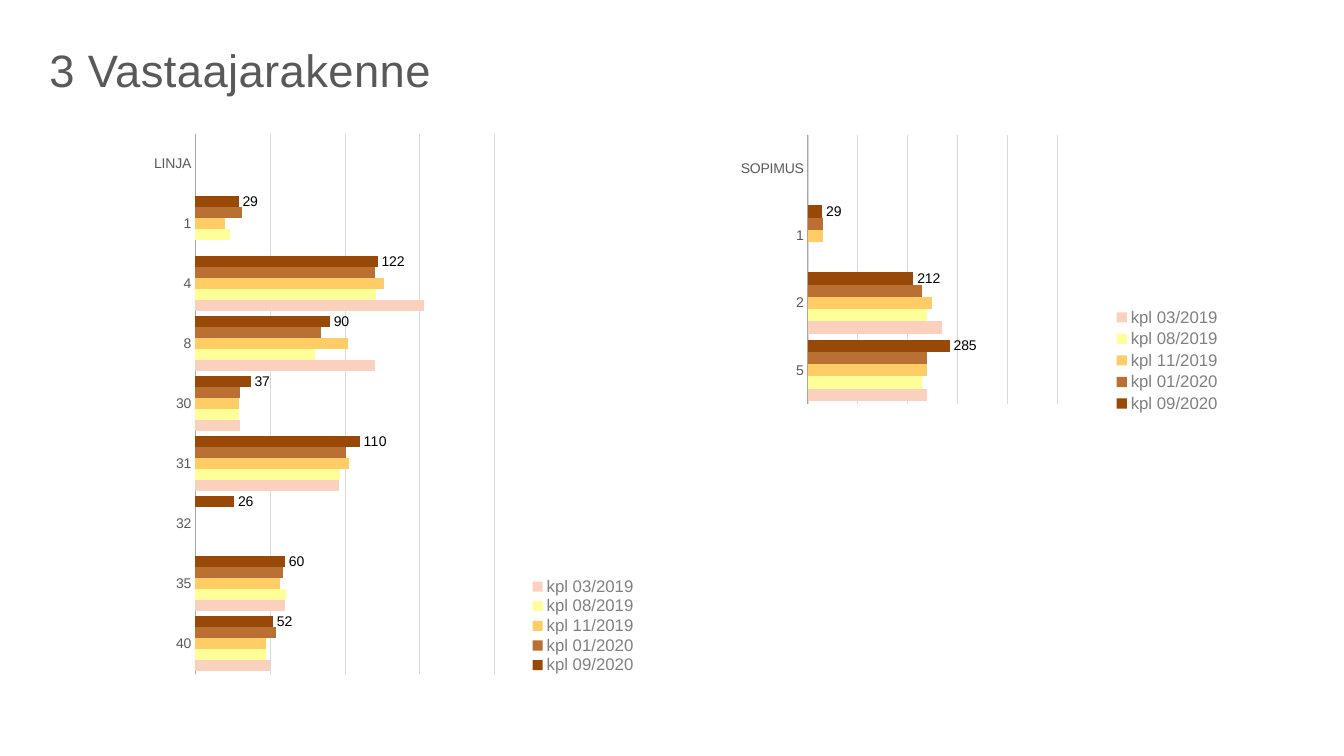
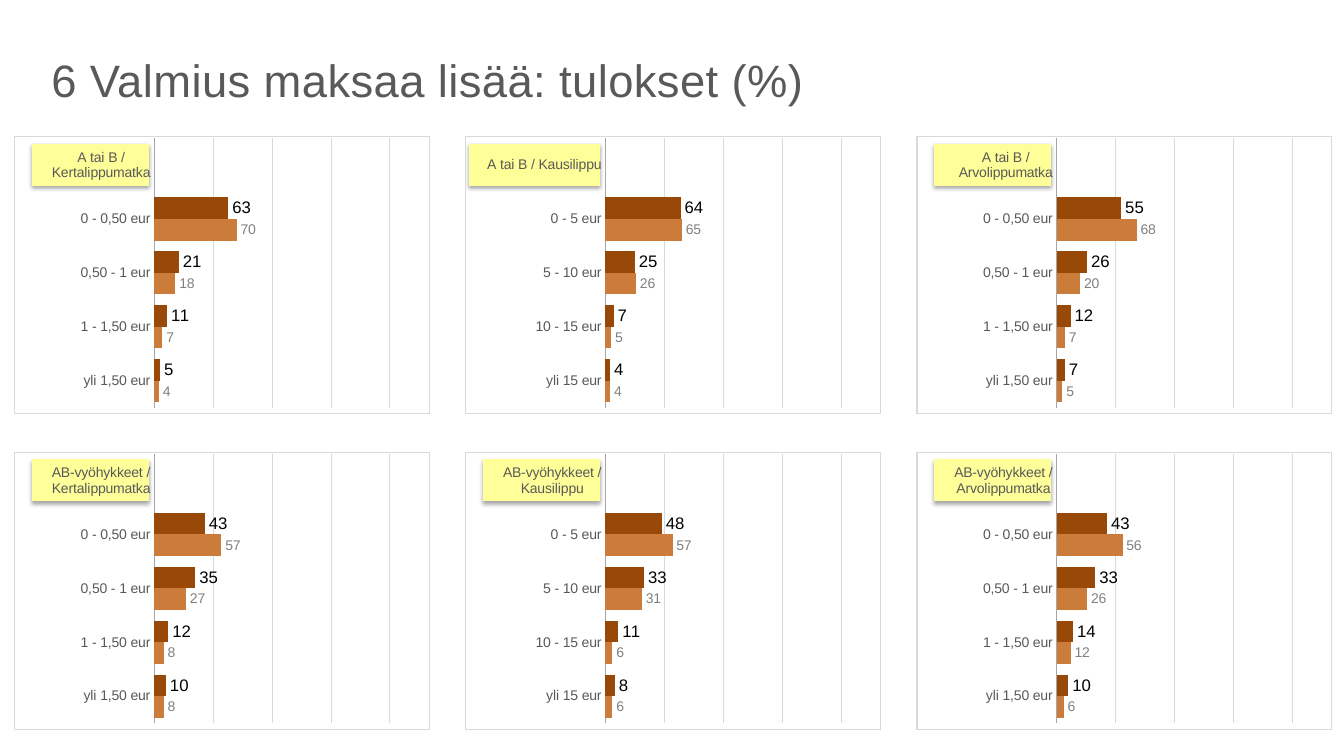
import dataclasses
import typing

import pptx
import pptx.chart.axis
import pptx.chart.chart
import pptx.chart.data
import pptx.dml.color
import pptx.enum.chart
import pptx.enum.shapes
import pptx.enum.text
import pptx.oxml
import pptx.oxml.ns
import pptx.util

SLIDE_W, SLIDE_H = 13.33, 7.5
FONT = "Arial"
BROWN, COPPER, AMBER, YELLOW, PEACH = "984807", "BA7033", "FFCC66", "FFFF99", "FBD0BD"
ORANGE = "CC7C3A"
BLACK, TEXT, MUTED, AXIS, GRID = "000000", "595959", "808080", "A6A6A6", "D9D9D9"
NS = pptx.oxml.ns.nsdecls("a", "c")
Pt = pptx.util.Pt

COLS, ROWS = 3, 2
PANEL_X, PANEL_Y, PANEL_W, PANEL_H = 1.05, 18, 30.91, 36.8
STEP_X, STEP_Y = 33.57, 41.73
TAG_RIGHT, TAG_TOP, TAG_H = 9.98, 1.07, 5.47
TAG_W, TAG_W_WIDE = 8.63, 9.68


class Box(typing.NamedTuple):
    x: float
    y: float
    w: float
    h: float

    def emu(self) -> tuple:
        sizes = (SLIDE_W, SLIDE_H) * 2
        return tuple(pptx.util.Inches(v * s / 100) for v, s in zip(self, sizes))


class Layout(typing.NamedTuple):
    x: float
    y: float
    w: float
    h: float


class Series(typing.NamedTuple):
    name: str
    values: tuple
    color: str
    label_size: int = 0
    label_color: str = BLACK


@dataclasses.dataclass
class BarChart:
    box: Box
    categories: tuple
    series: list[Series]
    plot: Layout
    maximum: int = 200
    major: int = 50
    legend: Layout | None = None
    border: bool = False


class Panel(typing.NamedTuple):
    heading: str
    bands: tuple
    now: tuple
    before: tuple
    tag_w: float = TAG_W


EURO = ("0 - 0,50 eur", "0,50 - 1 eur", "1 - 1,50 eur", "yli 1,50 eur")
SEASON = ("0 - 5 eur", "5 - 10 eur", "10 - 15 eur", "yli 15 eur")
PANELS = [
    Panel("A tai B / Kertalippumatka", EURO, (63, 21, 11, 5), (70, 18, 7, 4)),
    Panel("A tai B / Kausilippu", SEASON, (64, 25, 7, 4), (65, 26, 5, 4), TAG_W_WIDE),
    Panel("A tai B / Arvolippumatka", EURO, (55, 26, 12, 7), (68, 20, 7, 5)),
    Panel("AB-vyöhykkeet / Kertalippumatka", EURO, (43, 35, 12, 10), (57, 27, 8, 8)),
    Panel("AB-vyöhykkeet / Kausilippu", SEASON, (48, 33, 11, 8), (57, 31, 6, 6)),
    Panel("AB-vyöhykkeet / Arvolippumatka", EURO, (43, 33, 14, 10), (56, 26, 12, 6)),
]

ROUNDS = (
    ("kpl 09/2020", BROWN, 10),
    ("kpl 01/2020", COPPER, 0),
    ("kpl 11/2019", AMBER, 0),
    ("kpl 08/2019", YELLOW, 0),
    ("kpl 03/2019", PEACH, 0),
)
LINE_COUNTS = (
    (None, 29, 122, 90, 37, 110, 26, 60, 52),
    (None, 31, 120, 84, 30, 101, None, 59, 54),
    (None, 20, 126, 102, 29, 103, None, 57, 47),
    (None, 23, 121, 80, 29, 97, None, 61, 47),
    (None, None, 153, 120, 30, 96, None, 60, 50),
)
CONTRACT_COUNTS = (
    (None, 29, 212, 285),
    (None, 30, 230, 240),
    (None, 30, 250, 240),
    (None, None, 240, 230),
    (None, None, 270, 240),
)


def rgb(value: str) -> pptx.dml.color.RGBColor:
    return pptx.dml.color.RGBColor.from_string(value)


def apply(target: typing.Any, values: dict) -> None:
    for name, value in values.items():
        setattr(target, name, value)


def set_font(font: typing.Any, size: float, color: str) -> None:
    apply(font, {"name": FONT, "size": Pt(size), "bold": False})
    font.color.rgb = rgb(color)


def set_line(line: typing.Any, color: str, width: float) -> None:
    line.color.rgb = rgb(color)
    line.width = Pt(width)


def layout_xml(area: Layout, inner: bool) -> typing.Any:
    target = '<c:layoutTarget val="inner"/>' if inner else ""
    modes = "".join(f'<c:{k}Mode val="edge"/>' for k in "xy")
    sizes = "".join(f'<c:{k} val="{v}"/>' for k, v in area._asdict().items())
    return pptx.oxml.parse_xml(
        f"<c:layout {NS}><c:manualLayout>{target}{modes}{sizes}</c:manualLayout></c:layout>"
    )


def drop_layout(parent: typing.Any) -> None:
    for old in parent.xpath("./c:layout"):
        parent.remove(old)


def frame_chart(chart: pptx.chart.chart.Chart, border: bool) -> None:
    color = f'<a:solidFill><a:srgbClr val="{GRID}"/></a:solidFill>' if border else "<a:noFill/>"
    frame = pptx.oxml.parse_xml(
        f'<c:spPr {NS}><a:noFill/><a:ln w="{Pt(0.75)}">{color}</a:ln></c:spPr>'
    )
    chart.element.xpath("./c:chart")[0].addnext(frame)


def add_legend(chart: pptx.chart.chart.Chart, area: Layout) -> None:
    chart.has_legend = True
    position = pptx.enum.chart.XL_LEGEND_POSITION.RIGHT
    apply(chart.legend, {"position": position, "include_in_layout": False})
    set_font(chart.legend.font, 12, MUTED)
    legend = chart.element.xpath(".//c:legend")[0]
    drop_layout(legend)
    legend.xpath("./c:legendPos")[0].addnext(layout_xml(area, False))


def add_bars(slide: typing.Any, spec: BarChart) -> None:
    data = pptx.chart.data.CategoryChartData()
    data.categories = spec.categories
    for s in spec.series:
        data.add_series(s.name, s.values)
    kind = pptx.enum.chart.XL_CHART_TYPE.BAR_CLUSTERED
    chart = slide.shapes.add_chart(kind, *spec.box.emu(), data).chart
    apply(chart, {"has_title": False, "has_legend": False})
    set_font(chart.font, 18, BLACK)
    frame_chart(chart, spec.border)

    none = pptx.enum.chart.XL_TICK_MARK.NONE
    cat, val = chart.category_axis, chart.value_axis
    apply(cat, {"major_tick_mark": none, "minor_tick_mark": none,
                "reverse_order": True, "has_major_gridlines": False})
    set_font(cat.tick_labels.font, 10, TEXT)
    set_line(cat.format.line, AXIS, 0.75)
    apply(val, {"minimum_scale": 0, "maximum_scale": spec.maximum,
                "major_unit": spec.major, "has_major_gridlines": True, "visible": False})
    set_line(val.major_gridlines.format.line, GRID, 0.25)

    plot = chart.plots[0]
    apply(plot, {"gap_width": 50, "overlap": 0, "vary_by_categories": False})
    for bar, s in zip(plot.series, spec.series):
        bar.format.fill.solid()
        bar.format.fill.fore_color.rgb = rgb(s.color)
        if s.label_size:
            apply(bar.data_labels, {"show_value": True,
                                    "position": pptx.enum.chart.XL_LABEL_POSITION.OUTSIDE_END})
            set_font(bar.data_labels.font, s.label_size, s.label_color)

    area = chart.element.xpath(".//c:plotArea")[0]
    drop_layout(area)
    area.insert(0, layout_xml(spec.plot, True))
    if spec.legend:
        add_legend(chart, spec.legend)


def add_tag(slide: typing.Any, box: Box) -> None:
    sp = slide.shapes.add_shape(pptx.enum.shapes.MSO_SHAPE.RECTANGLE, *box.emu())
    sp.fill.solid()
    sp.fill.fore_color.rgb = rgb(YELLOW)
    set_line(sp.line, YELLOW, 0.75)
    sp.shadow.inherit = False
    sp.element.spPr.xpath("./a:effectLst")[0].append(pptx.oxml.parse_xml(
        f'<a:outerShdw {NS} blurRad="{Pt(3.1)}" dist="{Pt(1.8)}" dir="5400000" rotWithShape="0">'
        f'<a:srgbClr val="{BLACK}"><a:alpha val="35000"/></a:srgbClr></a:outerShdw>'
    ))


def add_title(slide: typing.Any, x: float, y: float, text: str) -> None:
    tf = slide.shapes.add_textbox(*Box(x, y, 80.5, 7.2).emu()).text_frame
    apply(tf, {"word_wrap": True, "margin_top": pptx.util.Inches(0.1),
               "vertical_anchor": pptx.enum.text.MSO_ANCHOR.TOP})
    p = tf.paragraphs[0]
    p.line_spacing = 1.1
    r = p.add_run()
    r.text = text
    set_font(r.font, 32.4, TEXT)
    r.font._element.set("spc", "30")


def count_series(counts: tuple) -> list[Series]:
    return [Series(name, values, color, size)
            for (name, color, size), values in zip(ROUNDS, counts)]


def add_structure_slide(prs: typing.Any) -> None:
    slide = prs.slides.add_slide(prs.slide_layouts[6])
    add_bars(slide, BarChart(
        Box(8.93, 16.67, 39.16, 73.47),
        ("LINJA", "1", "4", "8", "30", "31", "32", "35", "40"),
        count_series(LINE_COUNTS), Layout(0.143, 0.014, 0.568, 0.972),
        legend=Layout(0.77, 0.81, 0.22, 0.18)))
    add_title(slide, 2.93, 3.47, "3 Vastaajarakenne")
    add_bars(slide, BarChart(
        Box(52.74, 15.6, 38.33, 39.87), ("SOPIMUS", "1", "2", "5"),
        count_series(CONTRACT_COUNTS), Layout(0.192, 0.057, 0.532, 0.892),
        maximum=550, major=100, legend=Layout(0.78, 0.62, 0.22, 0.37)))


def add_results_slide(prs: typing.Any) -> None:
    slide = prs.slides.add_slide(prs.slide_layouts[6])
    add_title(slide, 3.08, 4.8, "6 Valmius maksaa lisää: tulokset (%)")
    for i, panel in enumerate(PANELS):
        row, col = divmod(i, COLS)
        x, y = PANEL_X + col * STEP_X, PANEL_Y + row * STEP_Y
        add_tag(slide, Box(x + TAG_RIGHT - panel.tag_w, y + TAG_TOP, panel.tag_w, TAG_H))
        add_bars(slide, BarChart(
            Box(x, y, PANEL_W, PANEL_H), (panel.heading, *panel.bands),
            [Series("Series 1", (None, *panel.now), BROWN, 12),
             Series("Series 2", (None, *panel.before), ORANGE, 10, MUTED)],
            Layout(0.337, 0.006, 0.568, 0.972), border=True))


def main() -> None:
    prs = pptx.Presentation()
    apply(prs, {"slide_width": pptx.util.Inches(SLIDE_W),
                "slide_height": pptx.util.Inches(SLIDE_H)})
    add_structure_slide(prs)
    add_results_slide(prs)
    prs.save("out.pptx")


if __name__ == "__main__":
    main()
